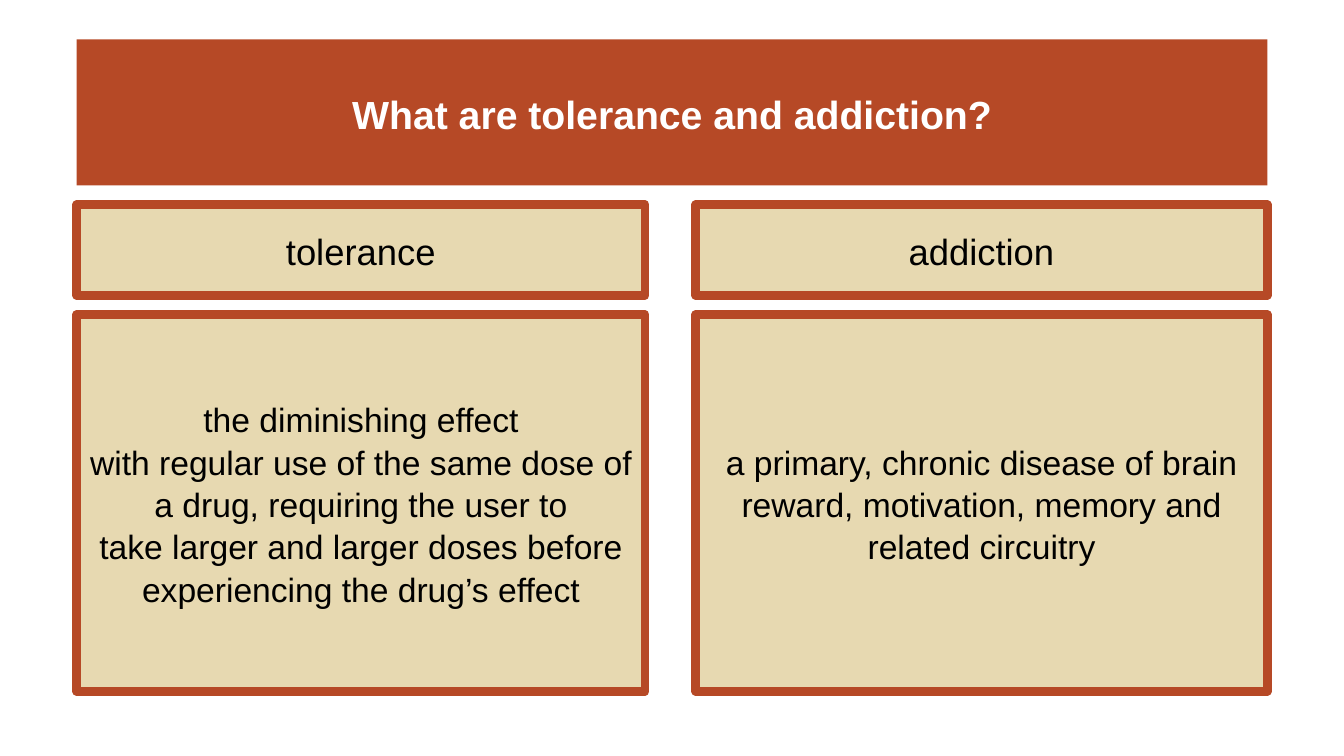
from dataclasses import dataclass

from lxml.etree import SubElement
from pptx import Presentation
from pptx.dml.color import RGBColor
from pptx.enum.text import MSO_ANCHOR, MSO_AUTO_SIZE, PP_ALIGN
from pptx.oxml.ns import qn
from pptx.util import Inches, Pt


@dataclass(frozen=True)
class Theme:
    font: str = "Arial"
    rust: RGBColor = RGBColor(0xB6, 0x49, 0x26)
    sand: RGBColor = RGBColor(0xE7, 0xD9, 0xB1)
    white: RGBColor = RGBColor(0xFF, 0xFF, 0xFF)
    black: RGBColor = RGBColor(0, 0, 0)
    title_size: int = 28
    term_size: int = 26
    definition_size: int = 24
    border: int = 6


THEME = Theme()
COMPARISON_LAYOUT = 4

# left, width, term, definition paragraphs
COLUMNS = [
    (0.76, 5.64, "tolerance", [
        "the diminishing effect",
        "with regular use of the same dose of a drug, requiring the user to",
        "take larger and larger doses before experiencing the drug’s effect",
    ]),
    (6.9, 5.67, "addiction", [
        "a primary, chronic disease of brain reward, motivation, memory "
        "and related circuitry",
    ]),
]


def remove_bullet(para):
    properties = para._p.get_or_add_pPr()
    properties.set("marL", "0")
    properties.set("indent", "0")
    SubElement(properties, qn("a:buNone"))


def fill_box(box, bounds, lines, size, color, fill, bold=False):
    """Place a placeholder, colour it and write centred paragraphs into it."""
    box.left, box.top, box.width, box.height = map(Inches, bounds)
    box.fill.solid()
    box.fill.fore_color.rgb = fill
    frame = box.text_frame
    frame.text = "\n".join(lines)
    frame.word_wrap = True
    frame.auto_size = MSO_AUTO_SIZE.NONE
    frame.vertical_anchor = MSO_ANCHOR.MIDDLE
    for para in frame.paragraphs:
        para.alignment = PP_ALIGN.CENTER
        para.line_spacing = 1.05
        para.space_before = Pt(0)
        remove_bullet(para)
        para.font.name = THEME.font
        para.font.size = Pt(size)
        para.font.bold = bold
        para.font.color.rgb = color


def add_card(box, bounds, lines, size):
    fill_box(box, bounds, lines, size, THEME.black, THEME.sand)
    box.line.color.rgb = THEME.rust
    box.line.width = Pt(THEME.border)


def main():
    deck = Presentation()
    deck.slide_width, deck.slide_height = Inches(13.33), Inches(7.5)
    page = deck.slides.add_slide(deck.slide_layouts[COMPARISON_LAYOUT])

    fill_box(page.shapes.title, (0.76, 0.39, 11.81, 1.45),
             ["What are tolerance and addiction?"],
             THEME.title_size, THEME.white, THEME.rust, bold=True)

    for column, (left, width, term, definition) in enumerate(COLUMNS):
        term_box = page.placeholders[2 * column + 1]
        definition_box = page.placeholders[2 * column + 2]
        add_card(term_box, (left, 2.03, width, 0.9), [term], THEME.term_size)
        add_card(definition_box, (left, 3.12, width, 3.74), definition,
                 THEME.definition_size)

    deck.save("out.pptx")


if __name__ == "__main__":
    main()
